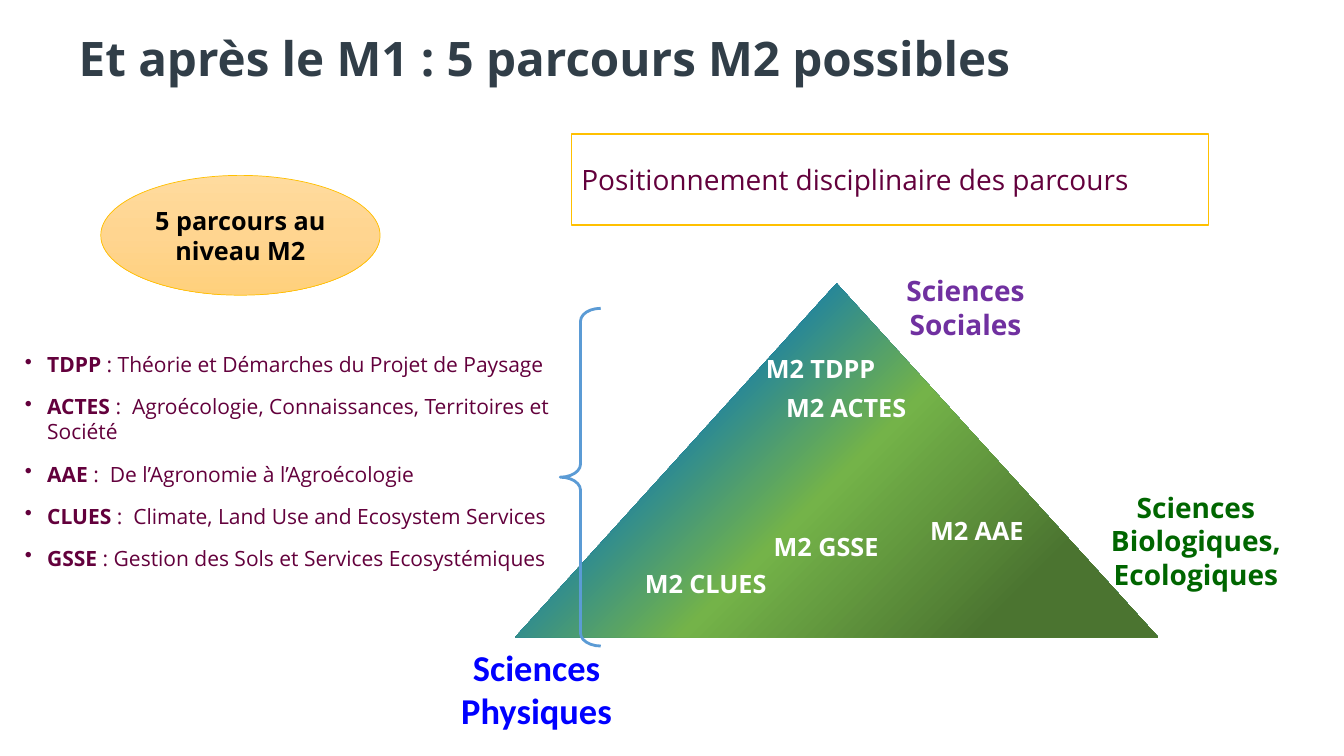
import pptx
import pptx.dml.color
import pptx.enum.shapes
import pptx.enum.text
import pptx.oxml
import pptx.oxml.ns
import pptx.util

Cm = pptx.util.Cm
Pt = pptx.util.Pt
RGBColor = pptx.dml.color.RGBColor
Shape = pptx.enum.shapes.MSO_SHAPE
Align = pptx.enum.text.PP_ALIGN
Anchor = pptx.enum.text.MSO_ANCHOR
AutoSize = pptx.enum.text.MSO_AUTO_SIZE
qn = pptx.oxml.ns.qn

SLATE = RGBColor(0x31, 0x3E, 0x48)
PLUM = RGBColor(0x63, 0x00, 0x3C)
PURPLE = RGBColor(0x70, 0x30, 0xA0)
DARK_GREEN = RGBColor(0x00, 0x66, 0x00)
PURE_BLUE = RGBColor(0x00, 0x00, 0xFF)
BRACE_BLUE = RGBColor(0x5B, 0x9B, 0xD5)
GOLD = RGBColor(0xFF, 0xC0, 0x00)
WHITE = RGBColor(0xFF, 0xFF, 0xFF)
BLACK = RGBColor(0x00, 0x00, 0x00)
TRIANGLE_STOPS = [
    (18, RGBColor(0x4B, 0x74, 0x30)),
    (48, RGBColor(0x74, 0xB3, 0x49)),
    (78, RGBColor(0x00, 0x70, 0xC0)),
]
OVAL_STOPS = [
    (0, RGBColor(0xFF, 0xDB, 0x9E)),
    (50, RGBColor(0xFF, 0xD5, 0x90)),
    (100, RGBColor(0xFF, 0xD0, 0x7C)),
]
CORNER_CIRCLE = '<a:path path="circle"><a:fillToRect l="100000" t="100000"/></a:path>'
DOWNWARD = '<a:lin ang="5400000" scaled="0"/>'

COURSES = [
    ("TDPP ", ": Théorie et Démarches du Projet de Paysage"),
    ("ACTES", " :  Agroécologie, Connaissances, Territoires et Société"),
    ("AAE", " :  De l’Agronomie à l’Agroécologie"),
    ("CLUES", " :  Climate, Land Use and Ecosystem Services"),
    ("GSSE", " : Gestion des Sols et Services Ecosystémiques"),
]
TRIANGLE_LABELS = [
    ("M2 AAE", 23.19, 12.85, 2.9),
    ("M2 TDPP", 19.05, 8.79, 3.3),
    ("M2 CLUES", 16, 14.2, 3.61),
    ("M2 GSSE", 19.25, 13.26, 3.18),
    ("M2 ACTES", 19.56, 9.75, 3.56),
]
SCIENCES = [
    ("Sciences Biologiques, Ecologiques", (26.42, 12.17, 7.44, 2.9), 20, DARK_GREEN, "Open Sans"),
    ("Sciences Sociales", (21.31, 6.81, 6.05, 1.88), 20, PURPLE, "Open Sans"),
    ("Sciences Physiques", (10.06, 16.41, 6.93, 1.88), 26, PURE_BLUE, "Calibri"),
]


class SlideBuilder:
    """Holds the text style and the current slide, and draws its elements."""

    font_name = "Open Sans"

    def __init__(self, slide):
        self.slide = slide

    def style(self, paragraph, size, color, bold=None, name=None):
        """Set the font shared by all runs of a paragraph."""
        font = paragraph.font
        font.name = name or self.font_name
        font.size = Pt(size)
        font.bold = bold
        font.color.rgb = color

    def title(self, text, box):
        """Move and format the title placeholder."""
        shape = self.slide.shapes.title
        shape.left, shape.top, shape.width, shape.height = map(Cm, box)
        frame = shape.text_frame
        frame.text = text
        frame.auto_size = AutoSize.NONE
        frame.vertical_anchor = Anchor.MIDDLE
        paragraph = frame.paragraphs[0]
        paragraph.alignment = Align.LEFT
        paragraph.line_spacing = 0.9
        self.style(paragraph, 34, SLATE, True)

    def shape(self, kind, box, fill=None, line=None, line_width=1):
        """Add a preset shape with an optional solid fill and outline."""
        shape = self.slide.shapes.add_shape(kind, *map(Cm, box))
        shape.shadow.inherit = False
        if fill is None:
            shape.fill.background()
        else:
            shape.fill.solid()
            shape.fill.fore_color.rgb = fill
        if line is None:
            shape.line.fill.background()
        else:
            shape.line.color.rgb = line
            shape.line.width = Pt(line_width)
        return shape

    def gradient(self, shape, stops, direction):
        """Fill a shape with a gradient of several stops."""
        shape.fill.gradient()
        stop_list = "".join(
            f'<a:gs pos="{position * 1000}"><a:srgbClr val="{color}"/></a:gs>'
            for position, color in stops
        )
        properties = shape._element.spPr
        properties.replace(
            properties.find(qn("a:gradFill")),
            pptx.oxml.parse_xml(
                f'<a:gradFill {pptx.oxml.ns.nsdecls("a")} rotWithShape="1">'
                f"<a:gsLst>{stop_list}</a:gsLst>{direction}</a:gradFill>"
            ),
        )

    def caption(self, shape, text, size, color, bold=True, align=Align.CENTER, name=None):
        """Write one paragraph in the middle of a shape."""
        frame = shape.text_frame
        frame.text = text
        frame.word_wrap = True
        frame.vertical_anchor = Anchor.MIDDLE
        paragraph = frame.paragraphs[0]
        paragraph.alignment = align
        self.style(paragraph, size, color, bold, name)

    def label(self, text, left, top, width):
        """Add a one-line white label."""
        frame = self.slide.shapes.add_textbox(Cm(left), Cm(top), Cm(width), Cm(1.02)).text_frame
        frame.text = text
        frame.word_wrap = False
        frame.auto_size = AutoSize.SHAPE_TO_FIT_TEXT
        self.style(frame.paragraphs[0], 18, WHITE, True)

    def bullets(self, items, box):
        """Add a bulleted list of bold terms and their descriptions."""
        frame = self.slide.shapes.add_textbox(*map(Cm, box)).text_frame
        frame.word_wrap = True
        frame.auto_size = AutoSize.SHAPE_TO_FIT_TEXT
        frame.margin_bottom = Cm(0.2)
        for index, (term, description) in enumerate(items):
            paragraph = frame.add_paragraph() if index else frame.paragraphs[0]
            properties = paragraph._p.get_or_add_pPr()
            properties.set("marL", str(Cm(0.56)))
            properties.set("indent", str(-Cm(0.56)))
            bullet = properties.makeelement(qn("a:buChar"), {"char": "•"})
            properties.append(bullet)
            paragraph.space_before = Pt(6 if index else 0)
            paragraph.space_after = Pt(6)
            self.style(paragraph, 15, PLUM)
            for text, bold in ((term, True), (description, False)):
                run = paragraph.add_run()
                run.text = text
                run.font.bold = bold


def main():
    presentation = pptx.Presentation()
    presentation.slide_width = Cm(33.87)
    presentation.slide_height = Cm(19.05)
    builder = SlideBuilder(presentation.slides.add_slide(presentation.slide_layouts[5]))

    builder.title("Et après le M1 : 5 parcours M2 possibles", (1.73, 0.76, 28.27, 1.55))

    triangle = builder.shape(Shape.ISOSCELES_TRIANGLE, (12.98, 7.14, 16.21, 8.92))
    triangle.adjustments[0] = 0.5
    builder.gradient(triangle, TRIANGLE_STOPS, CORNER_CIRCLE)
    for text, box, size, color, name in SCIENCES:
        builder.caption(builder.shape(Shape.OVAL, box), text, size, color, name=name)
    for label in TRIANGLE_LABELS:
        builder.label(*label)

    brace = builder.shape(Shape.LEFT_BRACE, (14.12, 7.77, 1.02, 8.51), line=BRACE_BLUE, line_width=2)
    brace.adjustments[0] = 0.32

    oval = builder.shape(Shape.OVAL, (2.54, 4.42, 7.04, 3.02), line=GOLD, line_width=0.5)
    builder.gradient(oval, OVAL_STOPS, DOWNWARD)
    builder.caption(oval, "5 parcours au niveau M2", 18, BLACK)
    builder.bullets(COURSES, (0.38, 8.74, 14.48, 5.89))

    banner = builder.shape(Shape.RECTANGLE, (14.4, 3.38, 16.05, 2.29), WHITE, GOLD)
    builder.caption(banner, "Positionnement disciplinaire des parcours", 20, PLUM, False, Align.LEFT)

    presentation.save("out.pptx")


if __name__ == "__main__":
    main()
